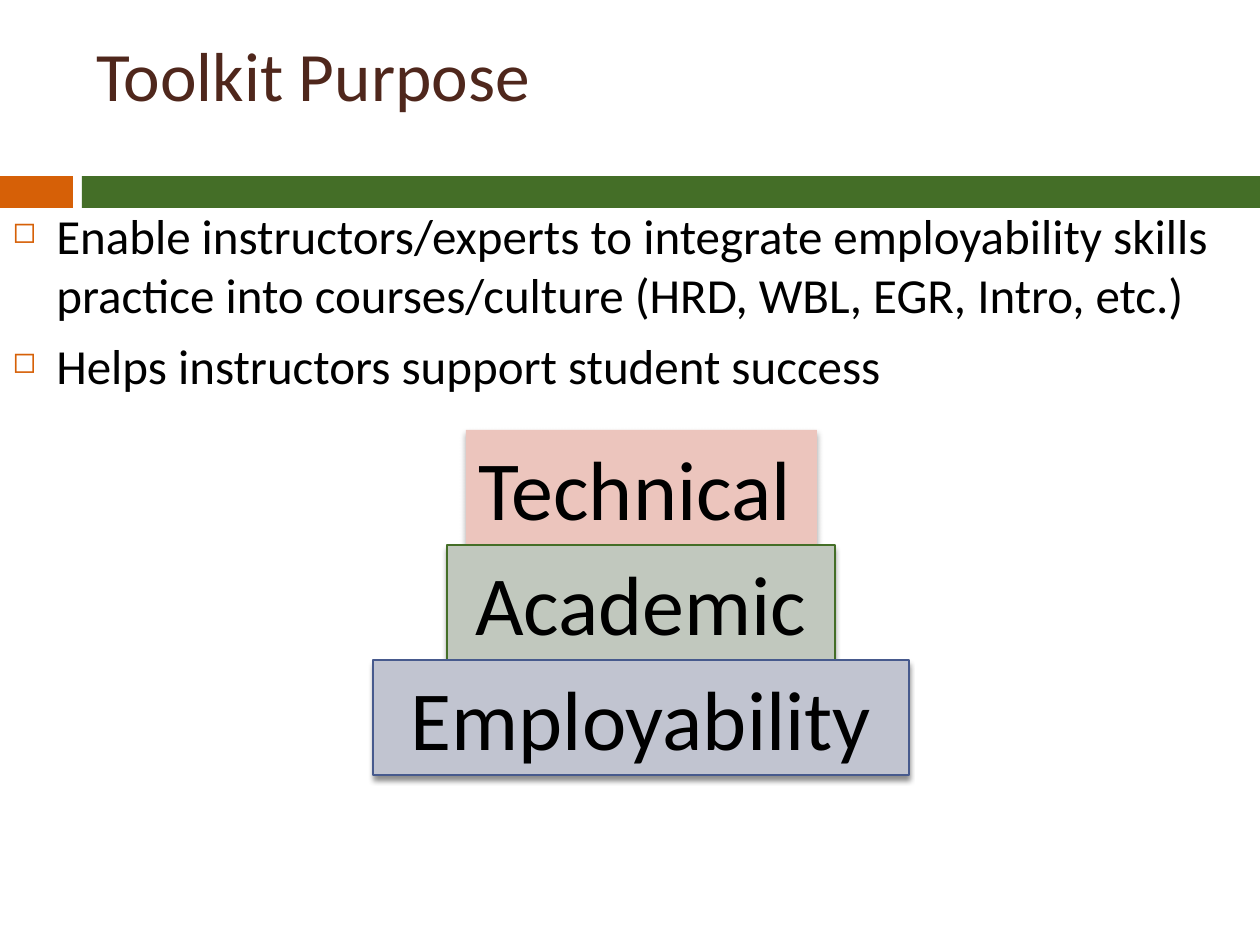
from lxml.etree import SubElement
from pptx import Presentation
from pptx.dml.color import RGBColor
from pptx.enum.shapes import MSO_SHAPE as Shape
from pptx.enum.text import MSO_ANCHOR as Anchor, MSO_AUTO_SIZE as AutoSize, PP_ALIGN as Align
from pptx.oxml.ns import qn
from pptx.util import Pt

PX = 914400 // 126
FONT = "Calibri"
BLACK = RGBColor(0x00, 0x00, 0x00)
BROWN = RGBColor(0x4F, 0x27, 0x1C)
ORANGE = RGBColor(0xD6, 0x60, 0x07)
GREEN = RGBColor(0x44, 0x6E, 0x27)
BLUE = RGBColor(0x47, 0x5A, 0x8D)
PALE_RED = RGBColor(0xEC, 0xC5, 0xBD)
PALE_GREEN = RGBColor(0xC1, 0xC8, 0xBE)
PALE_BLUE = RGBColor(0xC1, 0xC4, 0xD0)

BULLETS = [
    "Enable instructors/experts to integrate employability skills "
    "practice into courses/culture (HRD, WBL, EGR, Intro, etc.)",
    "Helps instructors support student success",
]
SOFT_SHADOW = (32, 3.5, 2.2)
FIRM_SHADOW = (45, 3, 2.4)
SKILLS = [
    ("Technical ", 351, PALE_RED, None, Align.LEFT, SOFT_SHADOW),
    ("Academic", 388, PALE_GREEN, GREEN, Align.CENTER, FIRM_SHADOW),
    ("Employability", 536, PALE_BLUE, BLUE, Align.CENTER, FIRM_SHADOW),
]
STACK_CENTER, STACK_TOP, STACK_STEP = 641, 430, 115


def px(*lengths):
    """Turn pixel lengths into EMU."""
    return [length * PX for length in lengths]


def style_text(paragraph, text, size, color):
    """Write text into a paragraph in the slide's font."""
    paragraph.text = text
    paragraph.font.name = FONT
    paragraph.font.size = Pt(size)
    paragraph.font.color.rgb = color


def add_bar(slide, box, fill, line=None):
    """Add a filled rectangle with an optional outline."""
    bar = slide.shapes.add_shape(Shape.RECTANGLE, *px(*box))
    bar.shadow.inherit = False
    bar.fill.solid()
    bar.fill.fore_color.rgb = fill
    if line is None:
        bar.line.fill.background()
    else:
        bar.line.color.rgb = line
        bar.line.width = Pt(0.79)
    return bar


def add_shadow(shape, opacity, blur, distance):
    """Drop a black shadow straight below a shape."""
    effects = shape._element.spPr.find(qn("a:effectLst"))
    shadow = SubElement(effects, qn("a:outerShdw"), blurRad=str(Pt(blur)),
                        dist=str(Pt(distance)), dir="5400000", rotWithShape="0")
    color = SubElement(shadow, qn("a:srgbClr"), val=str(BLACK))
    SubElement(color, qn("a:alpha"), val=str(opacity * 1000))


def add_text_box(slide, box, anchor):
    """Add a wrapping text box and return its text frame."""
    frame = slide.shapes.add_textbox(*px(*box)).text_frame
    frame.word_wrap = True
    frame.vertical_anchor = anchor
    return frame


def add_bullet(paragraph, indent):
    """Give a paragraph a hanging square bullet."""
    properties = paragraph._p.get_or_add_pPr()
    properties.set("marL", str(indent * PX))
    properties.set("indent", str(-indent * PX))
    color = SubElement(properties, qn("a:buClr"))
    SubElement(color, qn("a:srgbClr"), val=str(ORANGE))
    SubElement(properties, qn("a:buSzPct"), val="60000")
    SubElement(properties, qn("a:buChar"), char="◻")


def add_bullet_list(slide, box, items):
    """Add a text box holding one bullet per item."""
    frame = add_text_box(slide, box, Anchor.TOP)
    for index, item in enumerate(items):
        paragraph = frame.add_paragraph() if index else frame.paragraphs[0]
        add_bullet(paragraph, 44)
        paragraph.space_before = Pt(7)
        style_text(paragraph, item, 28, BLACK)


def add_skill_stack(slide):
    """Stack the skill blocks around a common centre line."""
    for index, (name, width, fill, line, alignment, shadow) in enumerate(SKILLS):
        box = (STACK_CENTER - width // 2, STACK_TOP + index * STACK_STEP, width, STACK_STEP)
        block = add_bar(slide, box, fill, line)
        add_shadow(block, *shadow)
        frame = block.text_frame
        frame.word_wrap = True
        frame.auto_size = AutoSize.SHAPE_TO_FIT_TEXT
        frame.vertical_anchor = Anchor.TOP
        paragraph = frame.paragraphs[0]
        paragraph.alignment = alignment
        style_text(paragraph, name, 48, BLACK)


def main():
    """Build the slide and save it."""
    presentation = Presentation()
    presentation.slide_width, presentation.slide_height = px(1260, 945)
    slide = presentation.slides.add_slide(presentation.slide_layouts[6])
    add_bar(slide, (0, 176, 73, 32), ORANGE)
    add_bar(slide, (82, 176, 1178, 32), GREEN)
    title = add_text_box(slide, (84, 31, 1124, 85), Anchor.MIDDLE)
    style_text(title.paragraphs[0], "Toolkit Purpose", 39.6, BROWN)
    add_bullet_list(slide, (0, 199, 1250, 640), BULLETS)
    add_skill_stack(slide)
    presentation.save("out.pptx")


if __name__ == "__main__":
    main()
